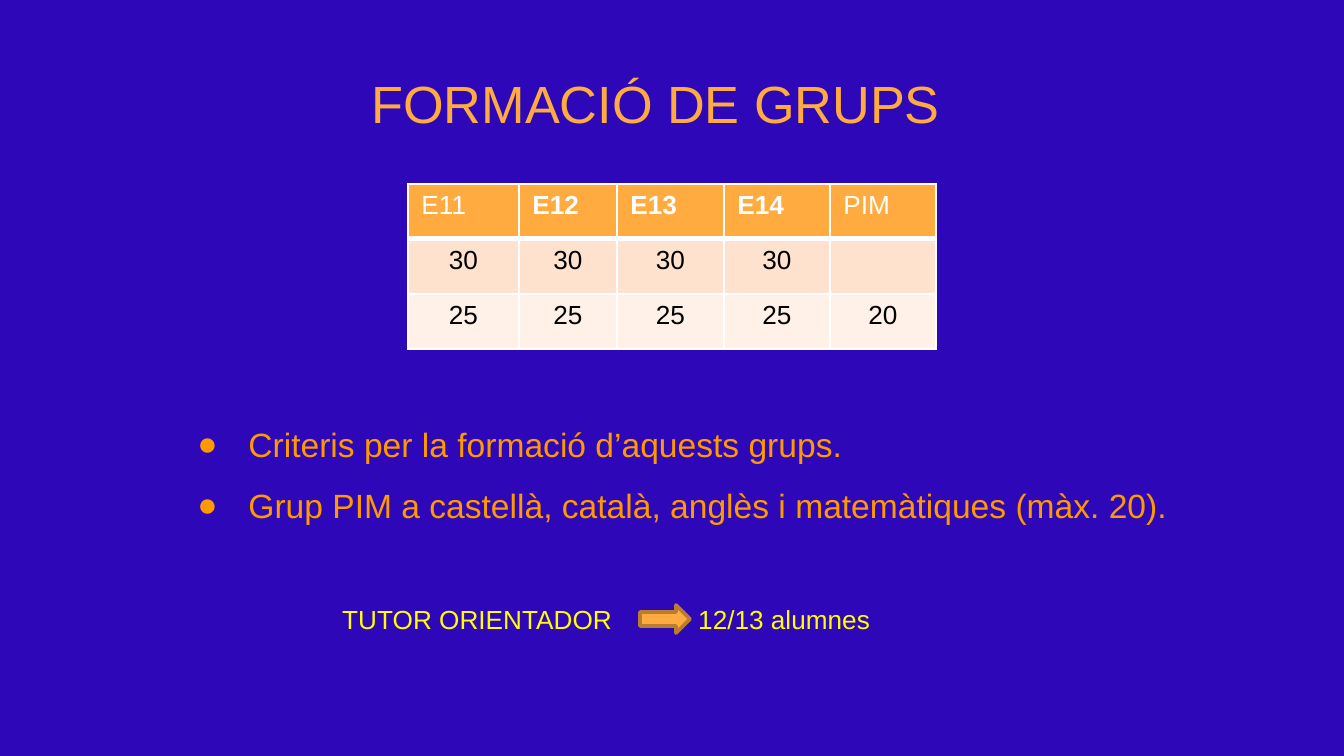
"""Build the slide on how the class groups are formed."""
from lxml import etree
from pptx import Presentation
from pptx.dml.color import RGBColor
from pptx.enum import shapes, text
from pptx.oxml import ns
from pptx.util import Emu, Pt

SCALE = 9144000 / 1344
ORANGE, AMBER, YELLOW, WHITE = "FFAB40", "FF9900", "FFFF00", "FFFFFF"


def px(*lengths):
    return [Emu(round(length * SCALE)) for length in lengths]


def paint(target, color):
    if hasattr(target, "solid"):
        target.solid()
        target = target.fore_color
    target.rgb = RGBColor.from_string(color)


def child(parent, tag, **attributes):
    return etree.SubElement(parent, ns.qn(tag), attributes)


def write(paragraph, words, size=14, color=YELLOW, bold=False, align="LEFT", spacing=1.0):
    paragraph.alignment = getattr(text.PP_ALIGN, align)
    paragraph.line_spacing = spacing
    paragraph.space_before = Pt(0)
    run = paragraph.add_run()
    run.text = words
    run.font.name, run.font.size, run.font.bold = "Arial", Pt(size), bold
    paint(run.font.color, color)


class Deck:
    def __init__(self, background):
        self.show = Presentation()
        self.show.slide_width, self.show.slide_height = px(1344, 756)
        self.slide = self.show.slides.add_slide(self.show.slide_layouts[1])
        paint(self.slide.background.fill, background)

    def frame(self, holder, box):
        holder.left, holder.top, holder.width, holder.height = px(*box)
        frame = holder.text_frame
        frame.word_wrap = True
        frame.auto_size = text.MSO_AUTO_SIZE.NONE
        frame.vertical_anchor = text.MSO_ANCHOR.TOP
        return frame

    def title(self, box, words):
        heading = self.frame(self.slide.shapes.title, box)
        write(heading.paragraphs[0], words, size=28, color=ORANGE)

    def bullets(self, box, points):
        body = self.frame(self.slide.placeholders[1], box)
        body.margin_top, body.margin_bottom = px(13, 13)
        indent, hang = px(67, -51)
        for index, point in enumerate(points):
            paragraph = body.add_paragraph() if index else body.paragraphs[0]
            write(paragraph, point, size=18, color=AMBER, spacing=1.5)
            props = paragraph._p.get_or_add_pPr()
            props.set("marL", str(indent))
            props.set("indent", str(hang))
            child(child(props, "a:buClr"), "a:srgbClr", val=AMBER)
            child(props, "a:buFont", typeface="Arial")
            child(props, "a:buChar", char="●")

    def tabbed(self, box, words, stop):
        note = self.frame(self.slide.shapes.add_textbox(*px(*box)), box)
        write(note.paragraphs[0], "\t".join(words))
        tabs = child(note.paragraphs[0]._p.get_or_add_pPr(), "a:tabLst")
        child(tabs, "a:tab", pos=str(px(stop)[0]), algn="l")

    def arrow(self, box):
        arrow = self.slide.shapes.add_shape(shapes.MSO_SHAPE.RIGHT_ARROW, *px(*box))
        arrow.shadow.inherit = False
        paint(arrow.fill, ORANGE)
        paint(arrow.line.fill, "BA7C2E")
        arrow.line.width = Pt(2)

    def borders(self, cell, **widths):
        props = cell._tc.get_or_add_tcPr()
        for side in "LRTB":
            line = child(props, f"a:ln{side}", w=str(Pt(widths.get(side, 1))))
            child(child(line, "a:solidFill"), "a:srgbClr", val=WHITE)

    def table(self, left, top, columns, row_height, rows, fills, bold):
        size = px(left, top, sum(columns), row_height * len(rows))
        grid = self.slide.shapes.add_table(len(rows), len(columns), *size).table
        for column, width in zip(grid.columns, px(*columns)):
            column.width = width
        for r, (values, fill) in enumerate(zip(rows, fills)):
            grid.rows[r].height = px(row_height)[0]
            for c, value in enumerate(values):
                cell = grid.cell(r, c)
                self.borders(cell, **({"B": 3} if r == 0 else {"T": 3} if r == 1 else {}))
                paint(cell.fill, fill)
                if value and r == 0:
                    write(cell.text_frame.paragraphs[0], value, color=WHITE, bold=value in bold)
                elif value:
                    write(cell.text_frame.paragraphs[0], value, color="000000", align="CENTER")


def main():
    deck = Deck("2E08B8")
    deck.title((358, 65, 616, 77), "FORMACIÓ DE GRUPS")
    deck.table(
        408, 184, [111, 98, 107, 106, 106], 55,
        rows=[["E11", "E12", "E13", "E14", "PIM"],
              ["30"] * 4 + [""],
              ["25"] * 4 + ["20"]],
        fills=[ORANGE, "FFE2CD", "FFF1E8"],
        bold={"E12", "E13", "E14"},
    )
    deck.tabbed((329, 597, 622, 46), ["TUTOR ORIENTADOR", "12/13 alumnes"], stop=356)
    deck.arrow((640, 605, 50, 28))
    deck.bullets((168, 391, 1040, 190), [
        "Criteris per la formació d’aquests grups.",
        "Grup PIM a castellà, català, anglès i matemàtiques (màx. 20).",
    ])
    deck.show.save("out.pptx")


if __name__ == "__main__":
    main()
